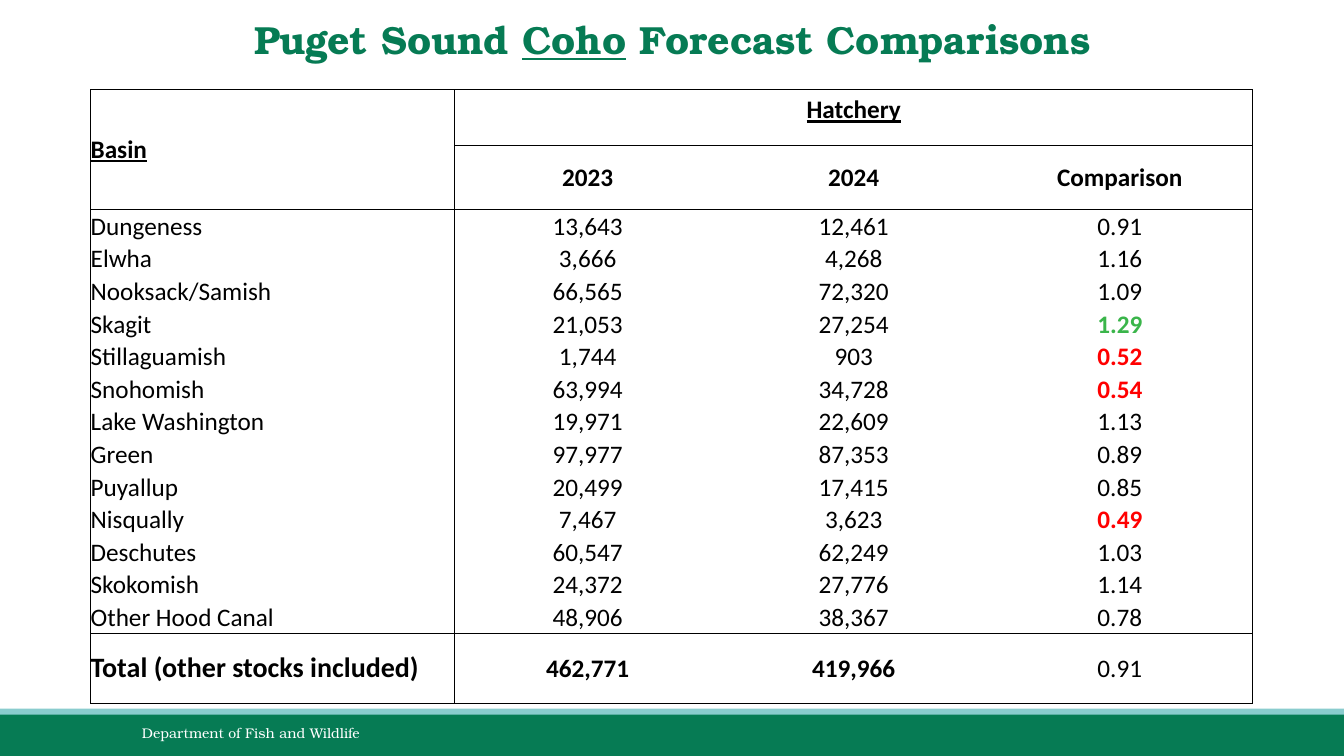
from dataclasses import dataclass
from lxml.etree import SubElement
from pptx import Presentation
from pptx.dml.color import RGBColor
from pptx.enum.shapes import MSO_SHAPE
from pptx.enum.text import MSO_ANCHOR, PP_ALIGN
from pptx.oxml.ns import qn
from pptx.util import Inches, Pt


@dataclass
class Theme:
    green: str = "067B54"
    aqua: str = "8ACCCE"
    white: str = "FFFFFF"
    black: str = "000000"
    high: str = "3AB54A"
    low: str = "FF0000"
    serif: str = "TeX Gyre Bonum"
    sans: str = "Calibri"
    head: int = 28
    sum: int = 20
    body: int = 18
    foot: int = 10


theme = Theme()
deck = Presentation()
deck.slide_width, deck.slide_height = Inches(13.33), Inches(7.5)
slide = deck.slides.add_slide(deck.slide_layouts.get_by_name("Title Only"))


def area(x, y, w, h):
    """Turn percentages of the slide's width and height into lengths."""
    wide, high = deck.slide_width / 100, deck.slide_height / 100
    return int(x * wide), int(y * high), int(w * wide), int(h * high)


def write(para, text, size, color, face=theme.sans, bold=False, line=False):
    run = para.add_run()
    run.text = text
    font = run.font
    font.name, font.size, font.bold, font.underline = face, Pt(size), bold, line
    font.color.rgb = RGBColor.from_string(color)


# Footer bands
for top, tall, color in [(94.4, 5.6, theme.green), (93.73, 0.8, theme.aqua)]:
    band = slide.shapes.add_shape(MSO_SHAPE.RECTANGLE, *area(0, top, 100, tall))
    band.shadow.inherit = False
    band.fill.solid()
    band.fill.fore_color.rgb = RGBColor.from_string(color)
    band.line.fill.background()

foot = slide.shapes.add_textbox(*area(9.83, 94.93, 31.66, 4)).text_frame
foot.word_wrap = True
foot.vertical_anchor = MSO_ANCHOR.MIDDLE
write(foot.paragraphs[0], "Department of Fish and Wildlife", theme.foot,
      theme.white, theme.serif)

# Title
title = slide.shapes.title
title.left, title.top, title.width, title.height = area(16.28, 0, 67.5, 10.4)
title.text_frame.vertical_anchor = MSO_ANCHOR.MIDDLE
para = title.text_frame.paragraphs[0]
para.alignment = PP_ALIGN.CENTER
for text, line in [("Puget Sound ", False), ("Coho", True),
                   (" Forecast Comparisons", False)]:
    write(para, text, theme.head, theme.green, theme.serif, True, line)

# Forecast table
rows = [
    ("Basin", "Hatchery", "", ""),
    ("", "2023", "2024", "Comparison"),
    ("Dungeness", "13,643", "12,461", "0.91"),
    ("Elwha", "3,666", "4,268", "1.16"),
    ("Nooksack/Samish", "66,565", "72,320", "1.09"),
    ("Skagit", "21,053", "27,254", "1.29"),
    ("Stillaguamish", "1,744", "903", "0.52"),
    ("Snohomish", "63,994", "34,728", "0.54"),
    ("Lake Washington", "19,971", "22,609", "1.13"),
    ("Green", "97,977", "87,353", "0.89"),
    ("Puyallup", "20,499", "17,415", "0.85"),
    ("Nisqually", "7,467", "3,623", "0.49"),
    ("Deschutes", "60,547", "62,249", "1.03"),
    ("Skokomish", "24,372", "27,776", "1.14"),
    ("Other Hood Canal", "48,906", "38,367", "0.78"),
    ("Total (other stocks included)", "462,771", "419,966", "0.91"),
]
marks = {"1.29": theme.high, "0.52": theme.low, "0.54": theme.low, "0.49": theme.low}
last = len(rows) - 1
wides = [27.08] + [19.8] * 3
talls = [7.33, 8.53] + [4.31] * (last - 2) + [9.33]
frame = slide.shapes.add_table(len(rows), len(wides),
                               *area(6.75, 11.87, sum(wides), sum(talls)))
table = frame.table
table.first_row = table.horz_banding = False
for col, wide in zip(table.columns, wides):
    col.width = area(0, 0, wide, 0)[2]
for row, tall in zip(table.rows, talls):
    row.height = area(0, 0, 0, tall)[3]
table.cell(0, 0).merge(table.cell(1, 0))
table.cell(0, 1).merge(table.cell(0, 3))

# Grid lines that are ruled, counted from the left and from the top
rule_x, rule_y = {0, 1, len(wides)}, {0, 1, 2, last, last + 1}
for r, row in enumerate(rows):
    for c, text in enumerate(row):
        cell = table.cell(r, c)
        if cell.is_spanned:
            continue
        edges = {"a:lnL": c in rule_x, "a:lnR": c + cell.span_width in rule_x,
                 "a:lnT": r in rule_y, "a:lnB": r + cell.span_height in rule_y}
        props = cell._tc.get_or_add_tcPr()
        for tag, ruled in edges.items():
            edge = SubElement(props, qn(tag), w=str(Pt(1)))
            if ruled:
                ink = SubElement(edge, qn("a:solidFill"))
                SubElement(ink, qn("a:srgbClr"), val=theme.black)
            else:
                SubElement(edge, qn("a:noFill"))
        cell.fill.solid()
        cell.fill.fore_color.rgb = RGBColor.from_string(theme.white)
        if text == "Hatchery":
            cell.vertical_anchor = MSO_ANCHOR.TOP
        else:
            cell.margin_left = cell.margin_right = 0
            cell.margin_top = cell.margin_bottom = 0
            inner = 2 <= r < last
            cell.vertical_anchor = MSO_ANCHOR.BOTTOM if inner else MSO_ANCHOR.MIDDLE
        para = cell.text_frame.paragraphs[0]
        para.alignment = PP_ALIGN.CENTER if c else PP_ALIGN.LEFT
        bold = r < 2 or text in marks or (r == last and c < 3)
        size = theme.sum if r == last and c == 0 else theme.body
        write(para, text, size, marks.get(text, theme.black), bold=bold, line=r == 0)

deck.save("out.pptx")
